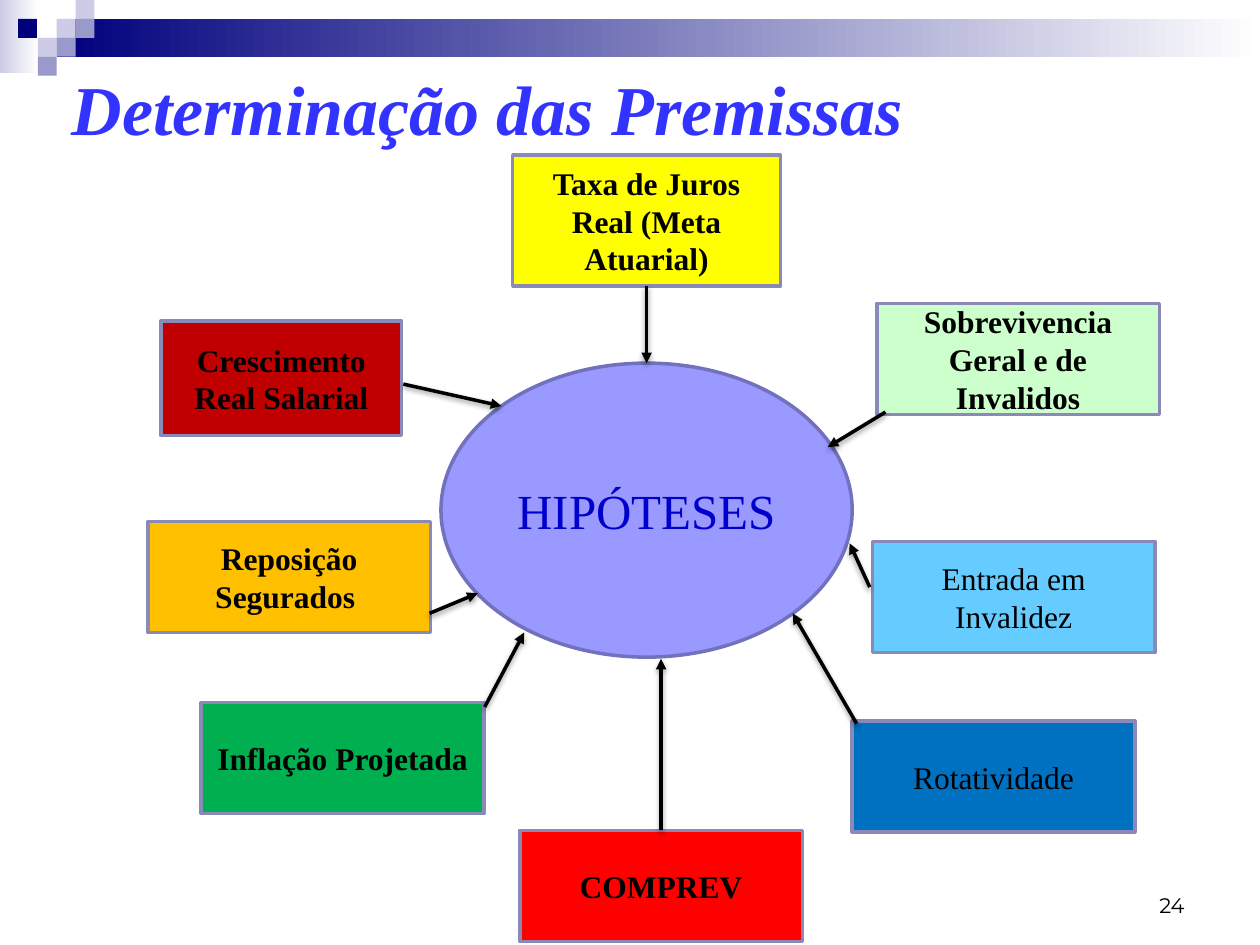
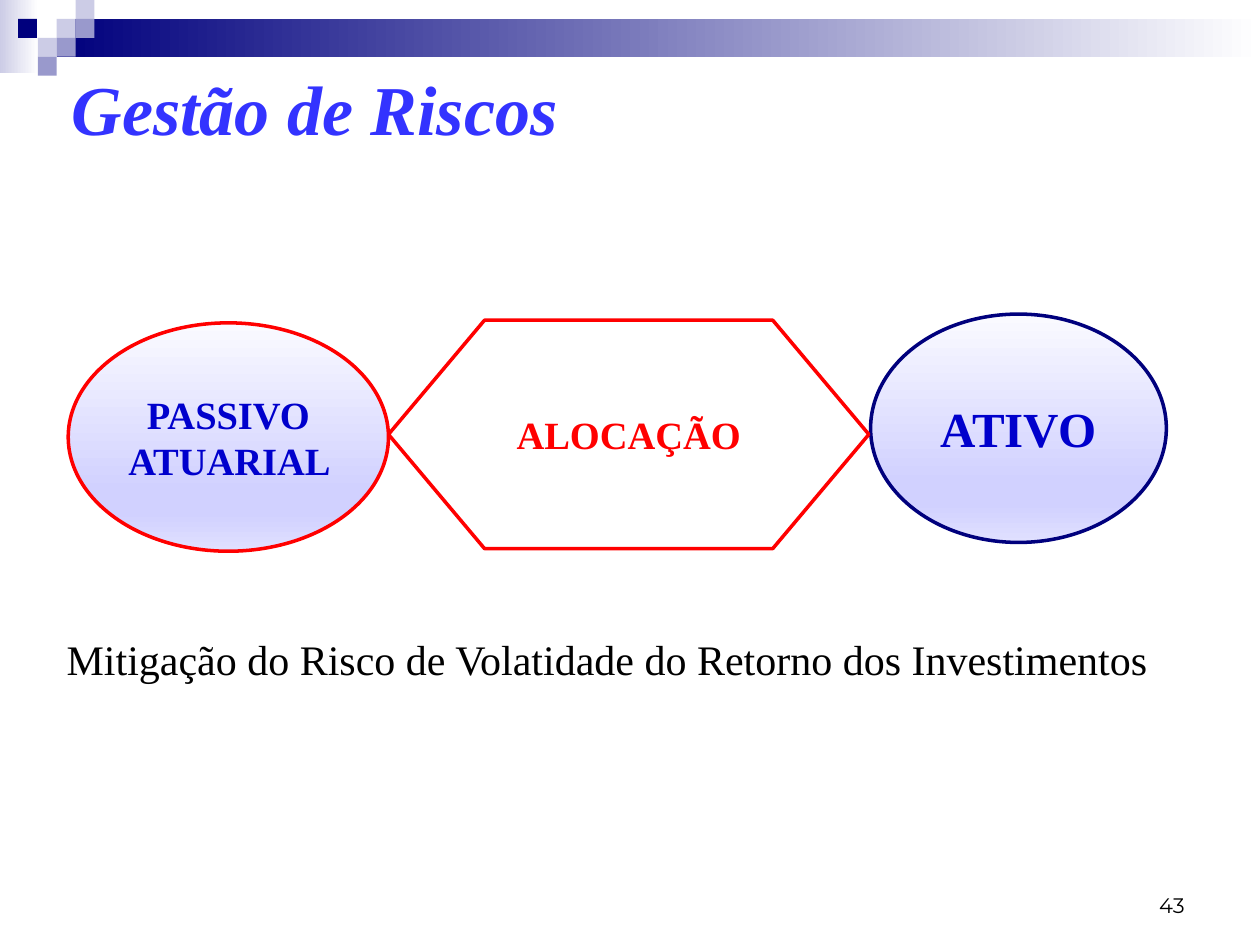
from lxml.etree import SubElement
from pptx import Presentation
from pptx.dml.color import RGBColor
from pptx.enum.shapes import MSO_CONNECTOR, MSO_SHAPE
from pptx.enum.text import MSO_ANCHOR, PP_ALIGN
from pptx.oxml.ns import qn
from pptx.util import Pt

SERIF = "Times New Roman"
NAVY, LILAC, VIOLET = "00007D", "CCCCE6", "9999CC"
BLACK, WHITE, RED, BLUE = "000000", "FFFFFF", "FF0000", "0000CC"
BOX_LINE = "8A8AB9"
SQUARE = 10.8
SQUARES = [(32.4, 10.8, LILAC), (43.2, 0, LILAC), (43.2, 10.8, VIOLET),
           (21.6, 21.6, LILAC), (10.3, 10.8, NAVY), (32.4, 21.6, VIOLET),
           (21.6, 32.4, VIOLET)]
OVAL_GRADIENT = [(0, "FAFAFF"), (74, "D1D1FF"), (83, "D1D1FF"), (100, "E0E0FF")]


def color(value):
    """Turn a hex string into a colour."""
    return RGBColor.from_string(value)


def fill_gradient(shape, stops, angle):
    """Fill a shape with gradient stops, at a counter-clockwise angle."""
    shape.fill.gradient()
    shape.fill.gradient_angle = angle
    stop_list = shape._element.spPr.find(qn("a:gradFill")).find(qn("a:gsLst"))
    for stop in list(stop_list):
        stop_list.remove(stop)
    for position, value in stops:
        stop = SubElement(stop_list, qn("a:gs"), pos=str(position * 1000))
        SubElement(stop, qn("a:srgbClr"), val=value)


def write_text(shape, text, size, ink, bold=False, italic=False, name=SERIF,
               align=PP_ALIGN.CENTER, anchor=MSO_ANCHOR.MIDDLE):
    """Write one formatted paragraph into a shape."""
    frame = shape.text_frame
    frame.word_wrap = True
    frame.vertical_anchor = anchor
    paragraph = frame.paragraphs[0]
    paragraph.text = text
    paragraph.alignment = align
    font = paragraph.font
    font.name, font.size = name, Pt(size)
    font.bold, font.italic = bold, italic
    font.color.rgb = color(ink)


def add_figure(slide, kind, place, fill=None, line=None):
    """Add a flat shape; a list as fill means a vertical gradient."""
    shape = slide.shapes.add_shape(kind, *map(Pt, place))
    shape.shadow.inherit = False
    if fill is None:
        shape.fill.background()
    elif isinstance(fill, list):
        fill_gradient(shape, fill, 270)
    else:
        shape.fill.solid()
        shape.fill.fore_color.rgb = color(fill)
    if line:
        shape.line.color.rgb = color(line)
        shape.line.width = Pt(2)
    else:
        shape.line.fill.background()
    return shape


def add_label(slide, place, text, size, ink, **style):
    """Add a text box with one paragraph."""
    write_text(slide.shapes.add_textbox(*map(Pt, place)), text, size, ink, **style)


def add_arrow(slide, start, end):
    """Add a black arrow with a soft shadow below it."""
    arrow = slide.shapes.add_connector(MSO_CONNECTOR.STRAIGHT, *map(Pt, start + end))
    arrow.line.color.rgb = color(BLACK)
    arrow.line.width = Pt(2)
    SubElement(arrow.line._get_or_add_ln(), qn("a:tailEnd"), type="triangle")
    effects = SubElement(arrow._element.spPr, qn("a:effectLst"))
    shadow = SubElement(effects, qn("a:outerShdw"), blurRad=str(Pt(3.1)),
                        dist=str(Pt(1.6)), dir="5400000", rotWithShape="0")
    shadow_color = SubElement(shadow, qn("a:srgbClr"), val=BLACK)
    SubElement(shadow_color, qn("a:alpha"), val="38000")
    return arrow


def add_base_slide(presentation, title, number):
    """Add a slide with the top band, squares, title and page number."""
    slide = presentation.slides.add_slide(presentation.slide_layouts[6])
    for place, start in (((0, 0, 22, 42), LILAC), ((32.4, 10.8, 687.6, 21.6), NAVY)):
        band = add_figure(slide, MSO_SHAPE.RECTANGLE, place, WHITE)
        fill_gradient(band, [(0, start), (100, WHITE)], 0)
    for left, top, fill in SQUARES:
        add_figure(slide, MSO_SHAPE.RECTANGLE, (left, top, SQUARE, SQUARE), fill)
    add_label(slide, (516, 492, 168, 36), str(number), 12, BLACK, name="Montserrat",
              align=PP_ALIGN.RIGHT, anchor=MSO_ANCHOR.BOTTOM)
    add_label(slide, (34, 34, 648, 108), title, 40, "3333FF", bold=True, italic=True,
              align=PP_ALIGN.LEFT, anchor=MSO_ANCHOR.TOP)
    return slide


def add_assumption(slide, text, fill, left, top, width=161.5, height=63.5, bold=True):
    """Add a coloured box naming one actuarial assumption."""
    box = add_figure(slide, MSO_SHAPE.RECTANGLE, (left, top, width, height), fill, BOX_LINE)
    write_text(box, text, 18, BLACK, bold=bold)
    return box


def build_assumptions(presentation):
    """Build the slide of assumptions around the hypotheses."""
    slide = add_base_slide(presentation, "Determinação das Premissas", 24)
    add_assumption(slide, "Crescimento Real Salarial", "C00000", 92, 183.5, 137.5, 65.5)
    add_assumption(slide, "Inflação Projetada", "00B050", 115, 401.5)
    interest = add_assumption(slide, "Taxa de Juros Real (Meta Atuarial)", "FFFF00",
                              293, 88.5, 153, 75)
    add_assumption(slide, "Reposição Segurados ", "FFC000", 84.5, 298)
    add_assumption(slide, "Sobrevivencia Geral e de Invalidos", "CCFFCC", 501, 173.5)
    add_assumption(slide, "Rotatividade", "0070C0", 487, 412, bold=False)
    compensation = add_assumption(slide, "COMPREV", RED, 297, 474.5)
    add_assumption(slide, "Entrada em Invalidez", "66CCFF", 498.5, 309.5, bold=False)

    hypotheses = add_figure(slide, MSO_SHAPE.OVAL, (252, 207.5, 235, 168), "9999FF", "7171BD")
    write_text(hypotheses, "HIPÓTESES", 28, BLUE)

    for start, end in (((506, 235.5), (473, 255.5)), ((497, 335.5), (485.5, 310.5)),
                       ((489.5, 413.5), (453, 350.5)), ((277, 404), (299.5, 361.5)),
                       ((245.5, 350.5), (273, 339)), ((230.5, 219.5), (286.5, 232))):
        add_arrow(slide, start, end)
    from_compensation = add_arrow(slide, (377.75, 474.5), (377.75, 376.5))
    from_compensation.begin_connect(compensation, 0)
    from_interest = add_arrow(slide, (369.5, 163.5), (369.5, 207.5))
    from_interest.begin_connect(interest, 2)
    from_interest.end_connect(hypotheses, 0)


def build_risk_management(presentation):
    """Build the slide linking liabilities and assets by allocation."""
    slide = add_base_slide(presentation, "Gestão de Riscos", 43)
    add_label(slide, (31, 358.5, 647, 36), "Mitigação do Risco de Volatidade do Retorno dos Investimentos",
              24, BLACK, align=PP_ALIGN.JUSTIFY, anchor=MSO_ANCHOR.TOP)
    for kind, place, fill, line, text, size, ink in (
            (MSO_SHAPE.OVAL, (39, 184.5, 183, 130.5), OVAL_GRADIENT, RED,
             "PASSIVO ATUARIAL ", 22, BLUE),
            (MSO_SHAPE.OVAL, (497.5, 179.5, 169, 130.5), OVAL_GRADIENT, NAVY,
             "ATIVO", 28, BLUE),
            (MSO_SHAPE.FLOWCHART_PREPARATION, (222, 183, 274.5, 130.5), None, RED,
             "ALOCAÇÃO", 22, RED)):
        write_text(add_figure(slide, kind, place, fill, line), text, size, ink, bold=True)


def main():
    """Build and save the presentation."""
    presentation = Presentation()
    presentation.slide_width, presentation.slide_height = Pt(720), Pt(540)
    build_assumptions(presentation)
    build_risk_management(presentation)
    presentation.save("out.pptx")


if __name__ == "__main__":
    main()
